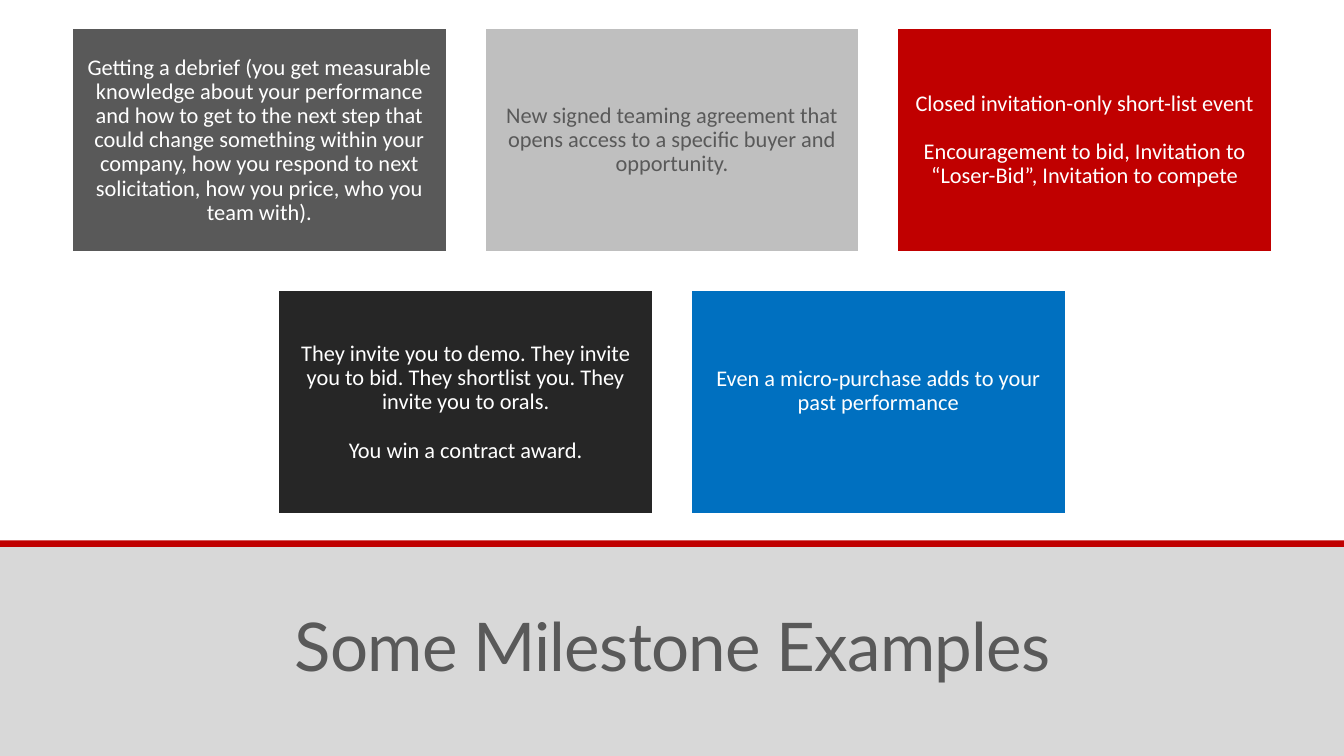
from dataclasses import dataclass

from pptx import Presentation
from pptx.dml.color import RGBColor
from pptx.enum.shapes import MSO_SHAPE as Preset
from pptx.enum.text import MSO_ANCHOR as Anchor, PP_ALIGN as Align
from pptx.util import Inches, Pt


@dataclass(frozen=True)
class Theme:
    white: str = "FFFFFF"
    gray: str = "595959"
    silver: str = "BFBFBF"
    red: str = "C00000"
    black: str = "262626"
    blue: str = "0070C0"
    band: str = "D8D8D8"
    title_font: str = "Lato"
    card_font: str = "Calibri"
    title_size: float = 36
    card_size: float = 12
    card_gap: float = 13


THEME = Theme()
SLIDE_WIDTH = 10
SLIDE_HEIGHT = SLIDE_WIDTH * 9 / 16
CARD_WIDTH, CARD_HEIGHT, CARD_SPACING = 2.79, 1.67, 0.28
FIRST_ROW_TOP = 0.21
CARD_INSET = 0.05


@dataclass(frozen=True)
class Milestone:
    fill: str
    paragraphs: tuple
    color: str = THEME.white
    bottom_inset: float = CARD_INSET


ROWS = (
    (
        Milestone(THEME.gray, (
            "Getting a debrief (you get measurable knowledge about your performance "
            "and how to get to the next step that could change something within your "
            "company, how you respond to next solicitation, how you price, who you "
            "team with).",
        )),
        Milestone(THEME.silver, (
            "New signed teaming agreement that opens access to a specific buyer "
            "and opportunity.",
        ), color=THEME.gray),
        Milestone(THEME.red, (
            "Closed invitation-only short-list event",
            "Encouragement to bid, Invitation to “Loser-Bid”, Invitation to compete",
        )),
    ),
    (
        Milestone(THEME.black, (
            "They invite you to demo. They invite you to bid. They shortlist you. "
            "They invite you to orals.",
            "You win a contract award.",
        )),
        Milestone(THEME.blue, (
            "Even a micro-purchase adds to your past performance",
        ), bottom_inset=0.22),
    ),
)


def add_block(slide, left, top, width, height, fill):
    block = slide.shapes.add_shape(
        Preset.RECTANGLE, Inches(left), Inches(top), Inches(width), Inches(height))
    block.shadow.inherit = False
    block.fill.solid()
    block.fill.fore_color.rgb = RGBColor.from_string(fill)
    block.line.fill.background()
    return block


def style_paragraph(paragraph, font, size, color, line_spacing):
    paragraph.alignment = Align.CENTER
    paragraph.line_spacing = line_spacing
    paragraph.font.name = font
    paragraph.font.size = Pt(size)
    paragraph.font.color.rgb = RGBColor.from_string(color)


def add_card(slide, left, top, milestone):
    card = add_block(slide, left, top, CARD_WIDTH, CARD_HEIGHT, milestone.fill)
    card.line.color.rgb = RGBColor.from_string(THEME.white)
    card.line.width = Pt(1.25)
    frame = card.text_frame
    frame.word_wrap = True
    frame.vertical_anchor = Anchor.MIDDLE
    frame.margin_left = frame.margin_right = frame.margin_top = Inches(CARD_INSET)
    frame.margin_bottom = Inches(milestone.bottom_inset)
    for index, wording in enumerate(milestone.paragraphs):
        paragraph = frame.add_paragraph() if index else frame.paragraphs[0]
        paragraph.text = wording
        style_paragraph(paragraph, THEME.card_font, THEME.card_size, milestone.color, 0.9)
        if index:
            paragraph.space_before = Pt(THEME.card_gap)


def add_card_rows(slide):
    for row_index, row in enumerate(ROWS):
        row_width = len(row) * (CARD_WIDTH + CARD_SPACING) - CARD_SPACING
        row_left = (SLIDE_WIDTH - row_width) / 2
        top = FIRST_ROW_TOP + row_index * (CARD_HEIGHT + CARD_SPACING)
        for column, milestone in enumerate(row):
            left = row_left + column * (CARD_WIDTH + CARD_SPACING)
            add_card(slide, left, top, milestone)


def add_title(slide, wording):
    title = slide.shapes.add_textbox(
        Inches(0.88), Inches(4.31), Inches(8.25), Inches(0.84))
    frame = title.text_frame
    frame.word_wrap = True
    frame.vertical_anchor = Anchor.BOTTOM
    paragraph = frame.paragraphs[0]
    run = paragraph.add_run()
    run.text = wording
    style_paragraph(paragraph, THEME.title_font, THEME.title_size, THEME.gray, 0.85)
    run._r.get_or_add_rPr().set("spc", "-40")


def main():
    deck = Presentation()
    deck.slide_width, deck.slide_height = Inches(SLIDE_WIDTH), Inches(SLIDE_HEIGHT)
    slide = deck.slides.add_slide(deck.slide_layouts[6])
    add_block(slide, 0, 4.06, SLIDE_WIDTH, SLIDE_HEIGHT - 4.06, THEME.band)
    add_title(slide, "Some Milestone Examples")
    add_block(slide, 0, 4.02, SLIDE_WIDTH, 0.05, THEME.red)
    add_card_rows(slide)
    deck.save("out.pptx")


if __name__ == "__main__":
    main()
